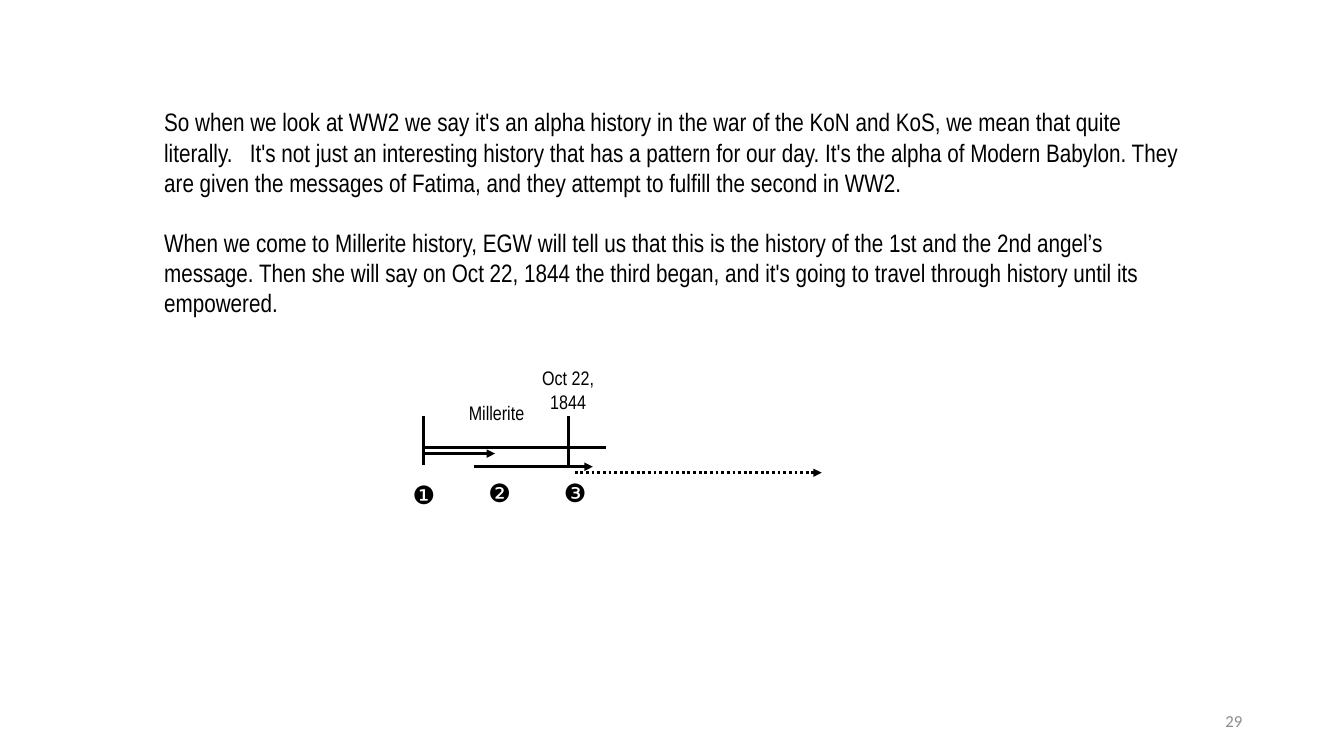
from lxml import etree
from pptx import Presentation
from pptx.dml.color import RGBColor
from pptx.enum.dml import MSO_LINE
from pptx.enum.shapes import MSO_CONNECTOR
from pptx.enum.text import MSO_ANCHOR, PP_ALIGN
from pptx.oxml.ns import qn
from pptx.util import Inches, Pt

STRAIGHT = MSO_CONNECTOR.STRAIGHT
DOTTED = MSO_LINE.ROUND_DOT
LEFT, CENTER, RIGHT = PP_ALIGN.LEFT, PP_ALIGN.CENTER, PP_ALIGN.RIGHT
TOP, MIDDLE = MSO_ANCHOR.TOP, MSO_ANCHOR.MIDDLE
BLACK = "000000"
GRAY = "8C8C8C"
NARROW = "Arial Narrow"


def add_text(box, lines, font, size, color=BLACK, align=CENTER, inset=0.04, anchor=TOP, gap=0):
    shape = slide.shapes.add_textbox(*[Inches(length) for length in box])
    frame = shape.text_frame
    frame.word_wrap = True
    frame.vertical_anchor = anchor
    frame.margin_left = frame.margin_right = Inches(inset)
    frame.margin_top = frame.margin_bottom = Inches(min(inset, 0.05))
    frame.text = "\n".join(lines)
    for paragraph in frame.paragraphs:
        paragraph.alignment = align
        paragraph.space_after = Pt(gap)
        paragraph.font.name = font
        paragraph.font.size = Pt(size)
        paragraph.font.color.rgb = RGBColor.from_string(color)


def add_line(start_x, start_y, end_x, end_y, arrow=False, dash=None):
    points = [Inches(length) for length in (start_x, start_y, end_x, end_y)]
    connector = slide.shapes.add_connector(STRAIGHT, *points)
    connector.line.width = Pt(2)
    connector.line.color.rgb = RGBColor.from_string(BLACK)
    if dash:
        connector.line.dash_style = dash
    properties = connector._element.spPr
    if arrow:
        etree.SubElement(properties.find(qn("a:ln")), qn("a:tailEnd"), type="triangle")
    etree.SubElement(properties, qn("a:effectLst"))


presentation = Presentation()
presentation.slide_width = Inches(13.33)
presentation.slide_height = Inches(7.5)
slide = presentation.slides.add_slide(presentation.slide_layouts[6])

add_text((9.42, 6.95, 3, 0.4), ["29"], "Calibri", 12, GRAY, RIGHT, 0.1, MIDDLE)

history = [
    "So when we look at WW2 we say it's an alpha history in the war of the KoN and KoS, "
    "we mean that quite literally.   It's not just an interesting history that has a pattern "
    "for our day. It's the alpha of Modern Babylon. They are given the messages of Fatima, "
    "and they attempt to fulfill the second in WW2.",
    "When we come to Millerite history, EGW will tell us that this is the history of the 1st "
    "and the 2nd angel’s message. Then she will say on Oct 22, 1844 the third began, and it's "
    "going to travel through history until its empowered.",
]
add_text((1.53, 1.01, 10.31, 2.52), history, NARROW, 18, align=LEFT, inset=0.1, gap=21)

add_line(4.2, 4.44, 6.01, 4.44)
for mark_x in (4.2, 5.64):
    add_line(mark_x, 4.13, mark_x, 4.61)

add_text((4.45, 3.94, 0.95, 0.48), ["Millerite"], NARROW, 14)
add_text((5.28, 3.59, 0.71, 0.67), ["Oct 22,", "1844"], NARROW, 14)

messages = [
    ("❶", 4.72, 4.2, 4.91, 4.5, None),
    ("❷", 4.7, 4.7, 5.88, 4.63, None),
    ("❸", 4.7, 5.7, 8.15, 4.69, DOTTED),
]
for index, (number, number_top, start, end, arrow_y, dash) in enumerate(messages):
    add_line(start, arrow_y, end, arrow_y, arrow=True, dash=dash)
    add_text((3.95 + 0.75 * index, number_top, 0.51, 0.46), [number], "Arial", 18)

presentation.save("out.pptx")
